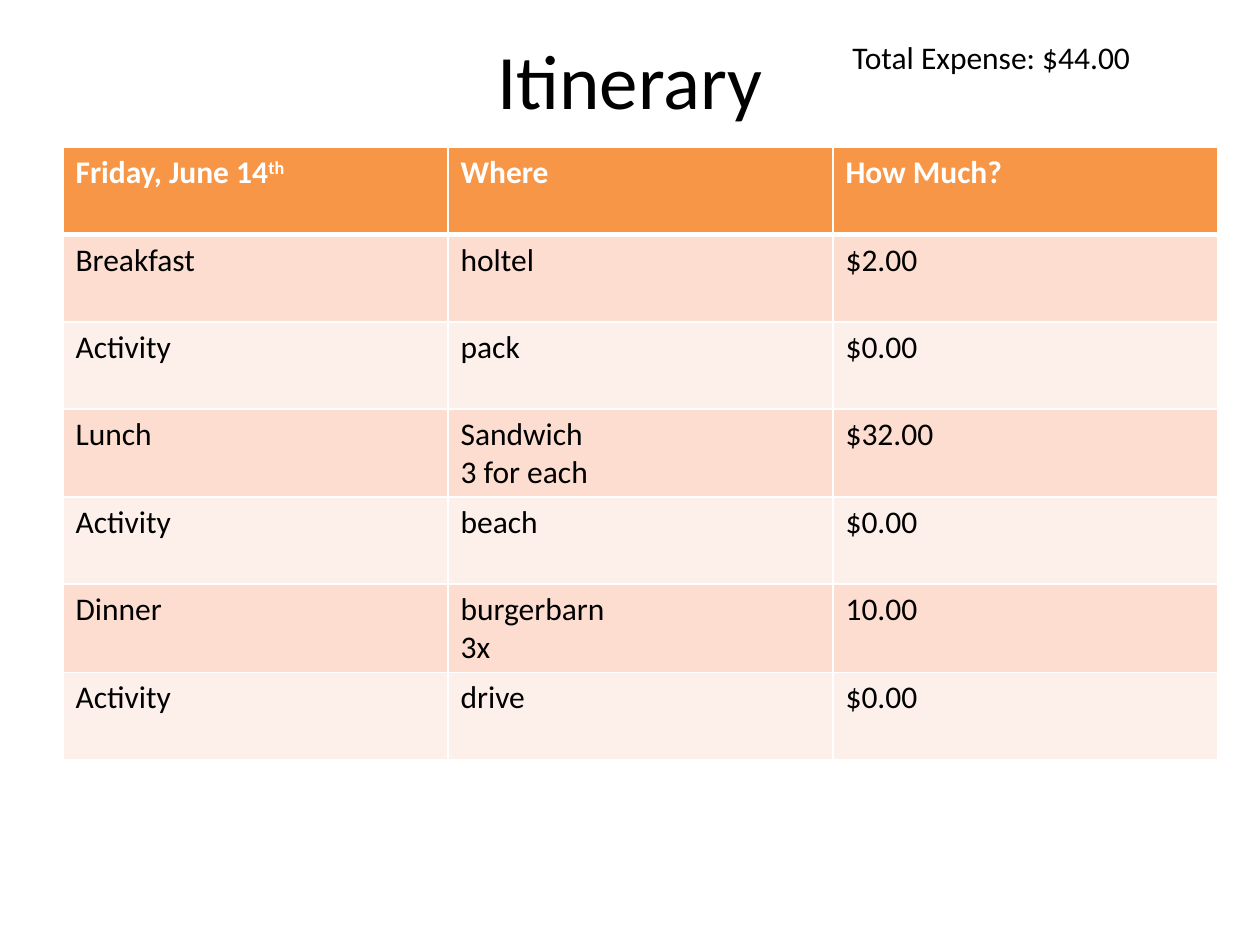
"""Build the Friday itinerary slide with its expense table."""
import lxml.etree
import pptx
import pptx.dml.color
import pptx.enum.text
import pptx.oxml.ns
import pptx.util

Pt = pptx.util.Pt
BLACK = pptx.dml.color.RGBColor(0x00, 0x00, 0x00)
WHITE = pptx.dml.color.RGBColor(0xFF, 0xFF, 0xFF)
ORANGE = pptx.dml.color.RGBColor(0xF7, 0x96, 0x46)
PEACH = pptx.dml.color.RGBColor(0xFC, 0xDD, 0xCF)
PALE_PEACH = pptx.dml.color.RGBColor(0xFD, 0xEF, 0xE9)

HEADINGS = ("Friday, June 14", "Where", "How Much?")
PLANS = (
    ("Breakfast", "holtel", "$2.00"),
    ("Activity", "pack", "$0.00"),
    ("Lunch", "Sandwich\n3 for each", "$32.00"),
    ("Activity", "beach", "$0.00"),
    ("Dinner", "burgerbarn\n3x", "10.00"),
    ("Activity", "drive", "$0.00"),
)
COLUMN_WIDTH = 220
ROW_HEIGHT = 49.75


def style_text(frame, size, color, bold=False):
    for paragraph in frame.paragraphs:
        paragraph.font.name = "Calibri"
        paragraph.font.size = Pt(size)
        paragraph.font.color.rgb = color
        paragraph.font.bold = bold


def add_label(slide, text, left, top, width, height, size):
    frame = slide.shapes.add_textbox(Pt(left), Pt(top), Pt(width), Pt(height)).text_frame
    frame.word_wrap = True
    frame.text = text
    style_text(frame, size, BLACK)
    return frame


def add_borders(cell, top, bottom):
    properties = cell._tc.get_or_add_tcPr()
    for side, width in (("L", 1), ("R", 1), ("T", top), ("B", bottom)):
        line = lxml.etree.SubElement(
            properties, pptx.oxml.ns.qn(f"a:ln{side}"), w=str(Pt(width)))
        fill = lxml.etree.SubElement(line, pptx.oxml.ns.qn("a:solidFill"))
        lxml.etree.SubElement(fill, pptx.oxml.ns.qn("a:srgbClr"), val=str(WHITE))


def add_itinerary(slide):
    rows = (HEADINGS,) + PLANS
    table = slide.shapes.add_table(
        len(rows), len(HEADINGS), Pt(36), Pt(84.4),
        Pt(COLUMN_WIDTH * len(HEADINGS)), Pt(ROW_HEIGHT * len(rows))).table
    for column in table.columns:
        column.width = Pt(COLUMN_WIDTH)
    for index, texts in enumerate(rows):
        table.rows[index].height = Pt(ROW_HEIGHT)
        is_header = index == 0
        background = ORANGE if is_header else (PALE_PEACH, PEACH)[index % 2]
        for cell, text in zip(table.rows[index].cells, texts):
            cell.text = text
            style_text(cell.text_frame, 18, WHITE if is_header else BLACK, is_header)
            add_borders(cell, 3 if index == 1 else 1, 3 if is_header else 1)
            cell.fill.solid()
            cell.fill.fore_color.rgb = background
    ordinal = table.cell(0, 0).text_frame.paragraphs[0].add_run()
    ordinal.text = "th"
    ordinal._r.get_or_add_rPr().set("baseline", "30000")


def main():
    deck = pptx.Presentation()
    deck.slide_width, deck.slide_height = Pt(720), Pt(540)
    slide = deck.slides.add_slide(deck.slide_layouts[6])
    title = add_label(slide, "Itinerary", 36, 0, 648, 90, 44)
    title.vertical_anchor = pptx.enum.text.MSO_ANCHOR.MIDDLE
    title.paragraphs[0].alignment = pptx.enum.text.PP_ALIGN.CENTER
    add_label(slide, "Total Expense: $44.00", 480, 18, 222, 29, 18)
    add_itinerary(slide)
    deck.save("out.pptx")


if __name__ == "__main__":
    main()
